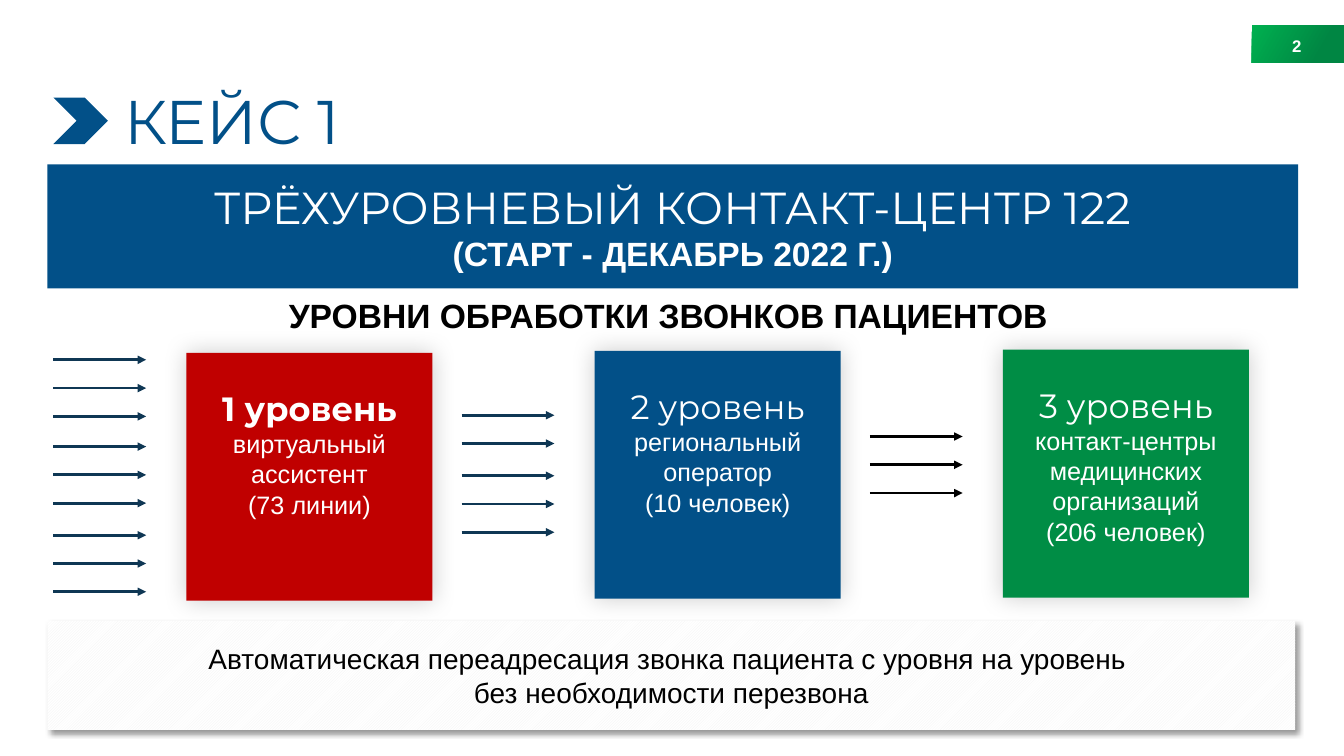
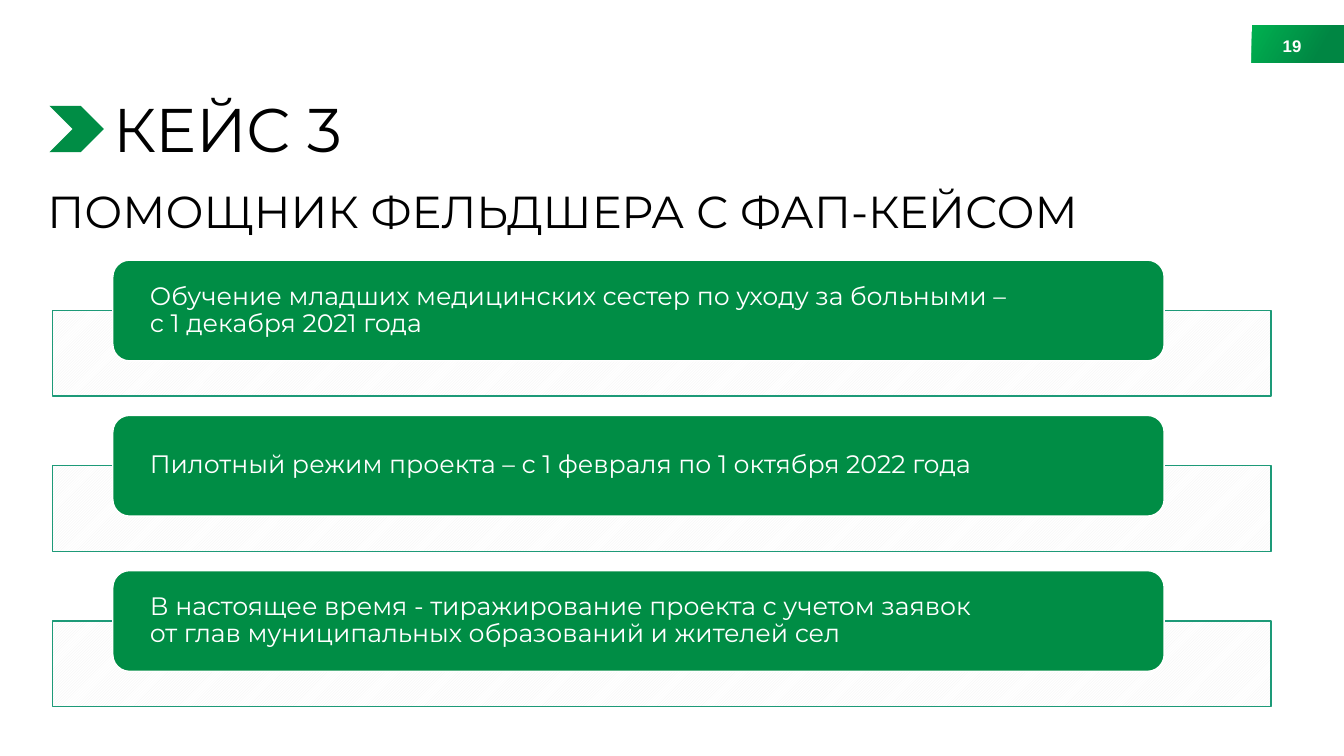
from lxml import etree
from pptx import Presentation
from pptx.dml.color import RGBColor
from pptx.enum.dml import MSO_PATTERN
from pptx.enum.shapes import MSO_CONNECTOR, MSO_SHAPE as Shape
from pptx.enum.text import MSO_ANCHOR as Anchor, MSO_AUTO_SIZE, PP_ALIGN as Align
from pptx.oxml.ns import qn
from pptx.util import Pt

COLORS = {
    "blue": "025088", "green": "008D45", "red": "C00000", "navy": "0F3754",
    "teal": "1D9A78", "black": "000000", "white": "FFFFFF", "hatch": "F2F2F2",
    "badge_light": "00B050", "badge_dark": "008643",
}
HEADING_FONT, BODY_FONT = "Montserrat", "Arial"

# Call levels: heading, bold, description, fill, top
LEVELS = [
    ("1 уровень", True, ["виртуальный ассистент", "(73 линии)"], "red", 252),
    ("2 уровень", False, ["региональный оператор", "(10 человек)"], "blue", 250.6),
    ("3 уровень", False, ["контакт-центры медицинских организаций", "(206 человек)"],
     "green", 249.8),
]
# Calls entering each level: line colour, then (top, count) of each cluster
CALLS = [
    ("navy", [(257, 3), (319, 3), (382.3, 3)]),
    ("navy", [(296.6, 2), (339.8, 3)]),
    ("black", [(311.8, 3)]),
]
LEVEL_LEFT, LEVEL_PITCH = 133.2, 291.6
LEVEL_WIDTH, LEVEL_HEIGHT = 175.7, 177.1
CALL_OFFSET, CALL_LENGTH, CALL_PITCH = 95, 66.2, 20.2

STAGES = [
    "Обучение младших медицинских сестер по уходу за больными –\nс 1 декабря 2021 года",
    "Пилотный режим проекта – с 1 февраля по 1 октября 2022 года",
    "В настоящее время - тиражирование проекта с учетом заявок\n"
    "от глав муниципальных образований и жителей сел",
]
STAGE_TOP, STAGE_PITCH = 185.8, 110.9


def rgb(name):
    return RGBColor.from_string(COLORS[name])


def points(*lengths):
    return [Pt(length) for length in lengths]


# Shared text and shape helpers
def set_text(shape, lines, color, align=Align.CENTER, anchor=Anchor.MIDDLE,
             insets=(7.2, 3.6, 7.2, 3.6), spacing=None):
    """Each line is (text, size, font, bold) and becomes one paragraph."""
    frame = shape.text_frame
    frame.word_wrap = True
    frame.auto_size = MSO_AUTO_SIZE.NONE
    frame.vertical_anchor = anchor
    (frame.margin_left, frame.margin_top,
     frame.margin_right, frame.margin_bottom) = points(*insets)
    for index, (text, size, font, bold) in enumerate(lines):
        para = frame.paragraphs[0] if index == 0 else frame.add_paragraph()
        para.text = text
        para.alignment = align
        if spacing:
            para.line_spacing = spacing
        para.font.size, para.font.name, para.font.bold = Pt(size), font, bold
        para.font.color.rgb = rgb(color)


def add_block(slide, kind, box, fill=None, line=None):
    block = slide.shapes.add_shape(kind, *points(*box))
    block.shadow.inherit = False
    if fill:
        block.fill.solid()
        block.fill.fore_color.rgb = rgb(fill)
    if line:
        block.line.color.rgb = rgb(line)
        block.line.width = Pt(1)
    else:
        block.line.fill.background()
    return block


def add_hatched_panel(slide, box, line=None):
    panel = add_block(slide, Shape.RECTANGLE, box, line=line)
    panel.fill.patterned()
    panel.fill.pattern = MSO_PATTERN.DARK_UPWARD_DIAGONAL
    panel.fill.fore_color.rgb = rgb("hatch")
    panel.fill.back_color.rgb = rgb("white")
    return panel


def add_shadow(shape, opacity, blur, distance, angle):
    effects = shape.element.spPr.find(qn("a:effectLst"))
    shadow = etree.SubElement(
        effects, qn("a:outerShdw"), blurRad=str(Pt(blur)), dist=str(Pt(distance)),
        dir=str(angle * 60000), algn="ctr", rotWithShape="0")
    tint = etree.SubElement(shadow, qn("a:srgbClr"), val=COLORS["black"])
    etree.SubElement(tint, qn("a:alpha"), val=str(opacity * 1000))


def add_label(slide, box, text, size, color, font=BODY_FONT, bold=False, **layout):
    label = slide.shapes.add_textbox(*points(*box))
    set_text(label, [(text, size, font, bold)], color, **layout)


def set_title(slide, box, text, size, color):
    title = slide.shapes.title
    title.left, title.top, title.width, title.height = points(*box)
    set_text(title, [(text, size, HEADING_FONT, False)], color, Align.LEFT, spacing=0.9)


def add_call_arrow(slide, left, top, color):
    x1, x2, y = points(left, left + CALL_LENGTH, top)
    arrow = slide.shapes.add_connector(MSO_CONNECTOR.STRAIGHT, x1, y, x2, y)
    arrow.line.color.rgb = rgb(color)
    arrow.line.width = Pt(2)
    etree.SubElement(arrow.line._get_or_add_ln(), qn("a:tailEnd"), type="triangle")
    etree.SubElement(arrow.element.spPr, qn("a:effectLst"))


# Shared slide furniture
def move_badge_to_layout(slide):
    badge = add_block(slide, Shape.RECTANGLE, (894, 18, 66, 26.9))
    badge.fill.gradient()
    badge.fill.gradient_angle = 330
    stops = badge.fill.gradient_stops
    for stop, color, position in zip(stops, ("badge_light", "badge_dark"), (0, 0.75)):
        stop.color.rgb = rgb(color)
        stop.position = position
    slide.slide_layout.shapes.element.append(badge.element)


def add_page_number(slide, number):
    add_label(slide, (720.7, 18, 216, 28.8), number, 12, "white", bold=True,
              align=Align.RIGHT)


def add_chevron(slide, left, top, color):
    add_block(slide, Shape.CHEVRON, (left, top, 38.9, 33.1), color)


# Slides
def build_contact_center(slide):
    set_title(slide, (81.4, 58.3, 236.2, 61.9), "КЕЙС 1", 44, "blue")
    add_chevron(slide, 38.2, 69.8, "blue")
    add_page_number(slide, "2")

    banner = add_block(slide, Shape.RECTANGULAR_CALLOUT, (33.8, 117.4, 893.5, 88.6), "blue")
    banner.adjustments[0], banner.adjustments[1] = -0.2, 0.5
    set_text(banner, [("ТРЁХУРОВНЕВЫЙ КОНТАКТ-ЦЕНТР 122", 32, HEADING_FONT, False),
                      ("(СТАРТ - ДЕКАБРЬ 2022 Г.)", 24, BODY_FONT, True)], "white")
    add_label(slide, (29.5, 205.9, 895.7, 38.9), "УРОВНИ ОБРАБОТКИ ЗВОНКОВ ПАЦИЕНТОВ",
              24, "black", bold=True, anchor=Anchor.TOP, insets=(9.4, 5, 9.4, 5))

    # Level cards with the calls that reach them
    for index, (level, calls) in enumerate(zip(LEVELS, CALLS)):
        heading, bold, description, fill, top = level
        left = LEVEL_LEFT + index * LEVEL_PITCH
        card = add_block(slide, Shape.RECTANGLE, (left, top, LEVEL_WIDTH, LEVEL_HEIGHT), fill)
        add_shadow(card, 20, 17.1, 0, 315)
        lines = [(heading, 24, HEADING_FONT, bold)]
        lines += [(text, 18, BODY_FONT, False) for text in description]
        set_text(card, lines, "white", anchor=Anchor.TOP, insets=(7.2, 25.2, 7.2, 3.6))
        color, clusters = calls
        for cluster_top, count in clusters:
            for call in range(count):
                add_call_arrow(slide, left - CALL_OFFSET, cluster_top + call * CALL_PITCH, color)

    summary = add_hatched_panel(slide, (33.8, 443.5, 891.4, 77.8))
    add_shadow(summary, 40, 4, 3, 45)
    set_text(summary, [("Автоматическая переадресация звонка пациента с уровня на уровень \n"
                        "без необходимости перезвона", 20, BODY_FONT, False)],
             "black", insets=(28, 28, 28, 28))


def build_paramedic_assistant(slide):
    set_title(slide, (26.6, 128.9, 876.2, 47.5), "ПОМОЩНИК ФЕЛЬДШЕРА С ФАП-КЕЙСОМ", 32, "black")
    add_label(slide, (74.2, 64.1, 236.2, 61.9), "КЕЙС 3", 44, "black", HEADING_FONT,
              align=Align.LEFT, spacing=0.9)
    add_chevron(slide, 35.3, 75.6, "green")
    add_page_number(slide, "19")

    # Project stages
    for index, text in enumerate(STAGES):
        top = STAGE_TOP + index * STAGE_PITCH
        add_hatched_panel(slide, (37.4, top + 36, 870.5, 61.2), "teal")
        stage = add_block(slide, Shape.ROUNDED_RECTANGLE, (80.6, top, 751, 72), "green", "white")
        set_text(stage, [(text, 18, HEADING_FONT, False)], "white", Align.LEFT,
                 insets=(23, 0, 23, 0), spacing=0.9)


def main():
    deck = Presentation()
    deck.slide_width, deck.slide_height = points(960, 540)
    title_only = deck.slide_layouts[5]
    contact_center = deck.slides.add_slide(title_only)
    move_badge_to_layout(contact_center)
    build_contact_center(contact_center)
    build_paramedic_assistant(deck.slides.add_slide(title_only))
    deck.save("out.pptx")


if __name__ == "__main__":
    main()
